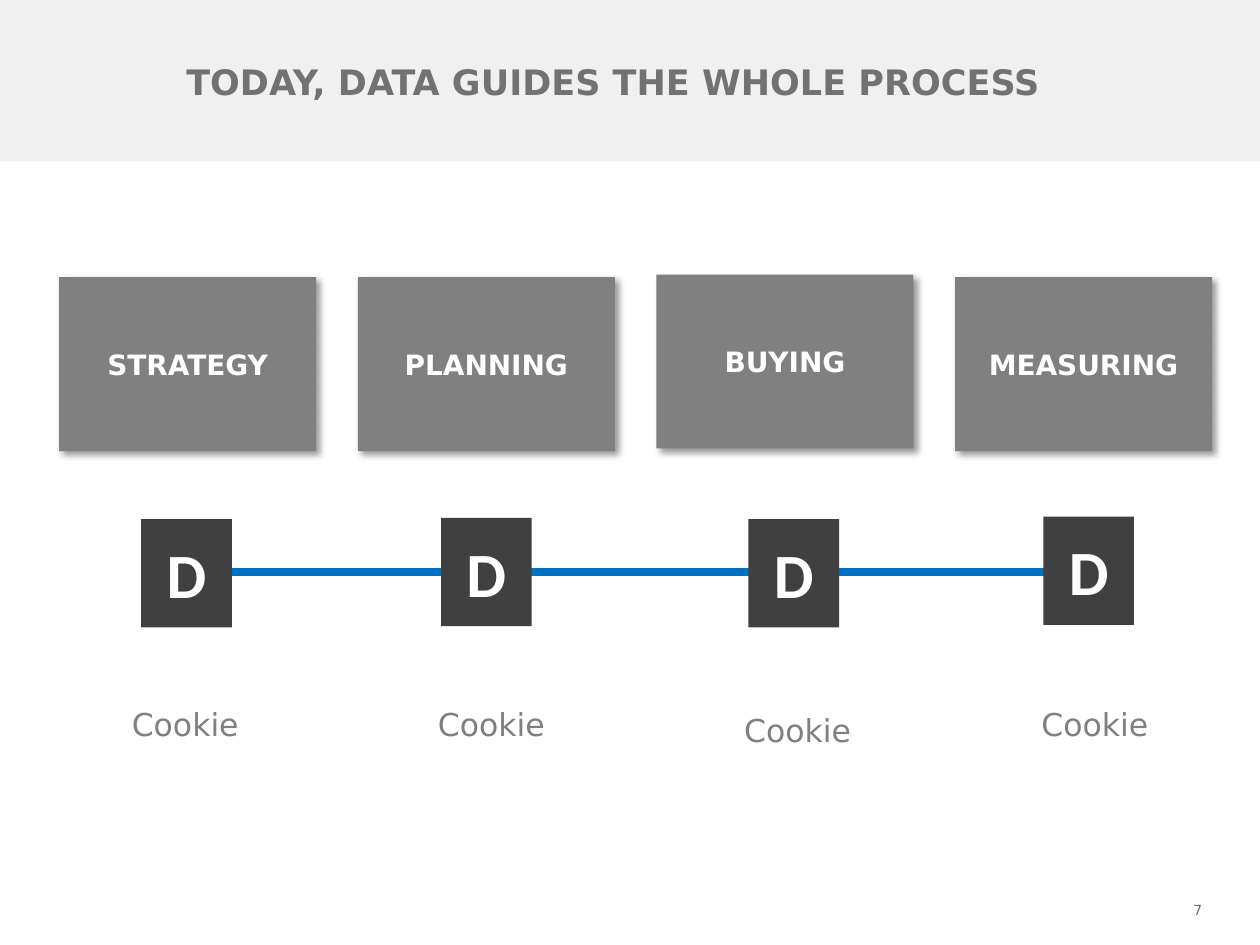
"""Build a slide on how data guides four stages of a process."""
import pptx
import pptx.dml.color
import pptx.enum.shapes
import pptx.enum.text
import pptx.oxml
import pptx.oxml.ns
import pptx.util

RGB = pptx.dml.color.RGBColor
BAND = RGB(0xF0, 0xF0, 0xF0)
INK = RGB(0x72, 0x72, 0x72)
GREY = RGB(0x80, 0x80, 0x80)
DARK = RGB(0x40, 0x40, 0x40)
BLUE = RGB(0x00, 0x70, 0xC0)
WHITE = RGB(0xFF, 0xFF, 0xFF)

ALIGN = pptx.enum.text.PP_ALIGN
MID = pptx.enum.text.MSO_ANCHOR.MIDDLE
GROW = pptx.enum.text.MSO_AUTO_SIZE.SHAPE_TO_FIT_TEXT
SANS = "DejaVu Sans"
INCH = pptx.util.Inches

WIDE, HIGH = 10, 7.5
LEFT, PITCH = 0.47, 2.37
CARD = (2.04, 1.38)
NODE = (0.72, 0.86)
CARD_ROW, NODE_ROW, LINE_ROW, TAG_ROW = 2.2, 4.12, 4.54, 5.55

# Each stage: name, card rise, node shift and rise, tag shift and drop.
STAGES = (
    ("STRATEGY", 0, -0.01, 0, -0.02, 0),
    ("PLANNING", 0, 0, 0.01, 0.04, 0),
    ("BUYING", 0.02, 0.07, 0, 0.1, 0.04),
    ("MEASURING", 0, 0.04, 0.02, 0.09, 0),
)

SHADE = (
    '<a:effectLst %s><a:outerShdw blurRad="50800" dist="38100" dir="2700000" '
    'algn="tl" rotWithShape="0"><a:srgbClr val="000000"><a:alpha val="40000"/>'
    "</a:srgbClr></a:outerShdw></a:effectLst>" % pptx.oxml.ns.nsdecls("a")
)


def write(shape, text, size, color, bold=False, face=SANS, align=ALIGN.CENTER):
    """Put one styled run in a shape."""
    frame = shape.text_frame
    frame.word_wrap = True
    para = frame.paragraphs[0]
    para.alignment = align
    run = para.add_run()
    run.text = text
    font = run.font
    font.size, font.name, font.bold = pptx.util.Pt(size), face, bold
    font.color.rgb = color
    return frame


def block(slide, left, top, width, height, fill):
    """Add a plain filled rectangle."""
    shape = slide.shapes.add_shape(
        pptx.enum.shapes.MSO_SHAPE.RECTANGLE,
        INCH(left), INCH(top), INCH(width), INCH(height))
    shape.shadow.inherit = False
    shape.fill.solid()
    shape.fill.fore_color.rgb = fill
    shape.line.fill.background()
    return shape


def label(slide, left, top, width, height, *words, **style):
    """Add a text box with one run."""
    box = slide.shapes.add_textbox(
        INCH(left), INCH(top), INCH(width), INCH(height))
    return write(box, *words, **style)


def card(slide, left, top, name):
    """Add a stage card with a soft shadow."""
    shape = block(slide, left, top, *CARD, GREY)
    props = shape._element.spPr
    props.replace(props.find(pptx.oxml.ns.qn("a:effectLst")),
                  pptx.oxml.parse_xml(SHADE))
    frame = write(shape, name, 16, WHITE, bold=True)
    frame.vertical_anchor = MID
    frame.margin_left = frame.margin_right = INCH(0.04)


def node(slide, left, top):
    """Add a dark data node."""
    shape = block(slide, left, top, *NODE, DARK)
    write(shape, "D", 36, WHITE, bold=True, face="Calibri").vertical_anchor = MID


def link(slide, start, end, top):
    """Add the level line that runs behind the nodes."""
    line = slide.shapes.add_connector(
        pptx.enum.shapes.MSO_CONNECTOR.STRAIGHT,
        INCH(start), INCH(top), INCH(end), INCH(top))
    line.line.color.rgb = BLUE
    line.line.width = pptx.util.Pt(4.75)
    line._element.spPr.append(pptx.oxml.parse_xml(
        "<a:effectLst %s/>" % pptx.oxml.ns.nsdecls("a")))


def main():
    """Compose and save the slide."""
    deck = pptx.Presentation()
    deck.slide_width, deck.slide_height = INCH(WIDE), INCH(HIGH)
    slide = deck.slides.add_slide(deck.slide_layouts[6])
    block(slide, 0, -0.03, WIDE, 1.31, BAND)
    page = label(slide, 9.09, 7.11, 0.55, 0.24, "7", 8, INK, align=ALIGN.RIGHT)
    page.auto_size = GROW
    title = label(slide, 1.38, 0.14, WIDE - 1.38, 1.02,
                  "TODAY, DATA GUIDES THE WHOLE PROCESS", 20, INK,
                  bold=True, align=ALIGN.LEFT)
    title.vertical_anchor = MID
    link(slide, 1.47, 8.82, LINE_ROW)
    inset = (CARD[0] - NODE[0]) / 2
    for col, (name, rise, shift, lift, slip, drop) in enumerate(STAGES):
        left = LEFT + col * PITCH
        card(slide, left, CARD_ROW - rise, name)
        node(slide, left + inset + shift, NODE_ROW - lift)
        tag = label(slide, left + slip, TAG_ROW + drop, CARD[0], 0.4,
                    "Cookie", 18, GREY)
        tag.auto_size = GROW
    deck.save("out.pptx")


if __name__ == "__main__":
    main()
